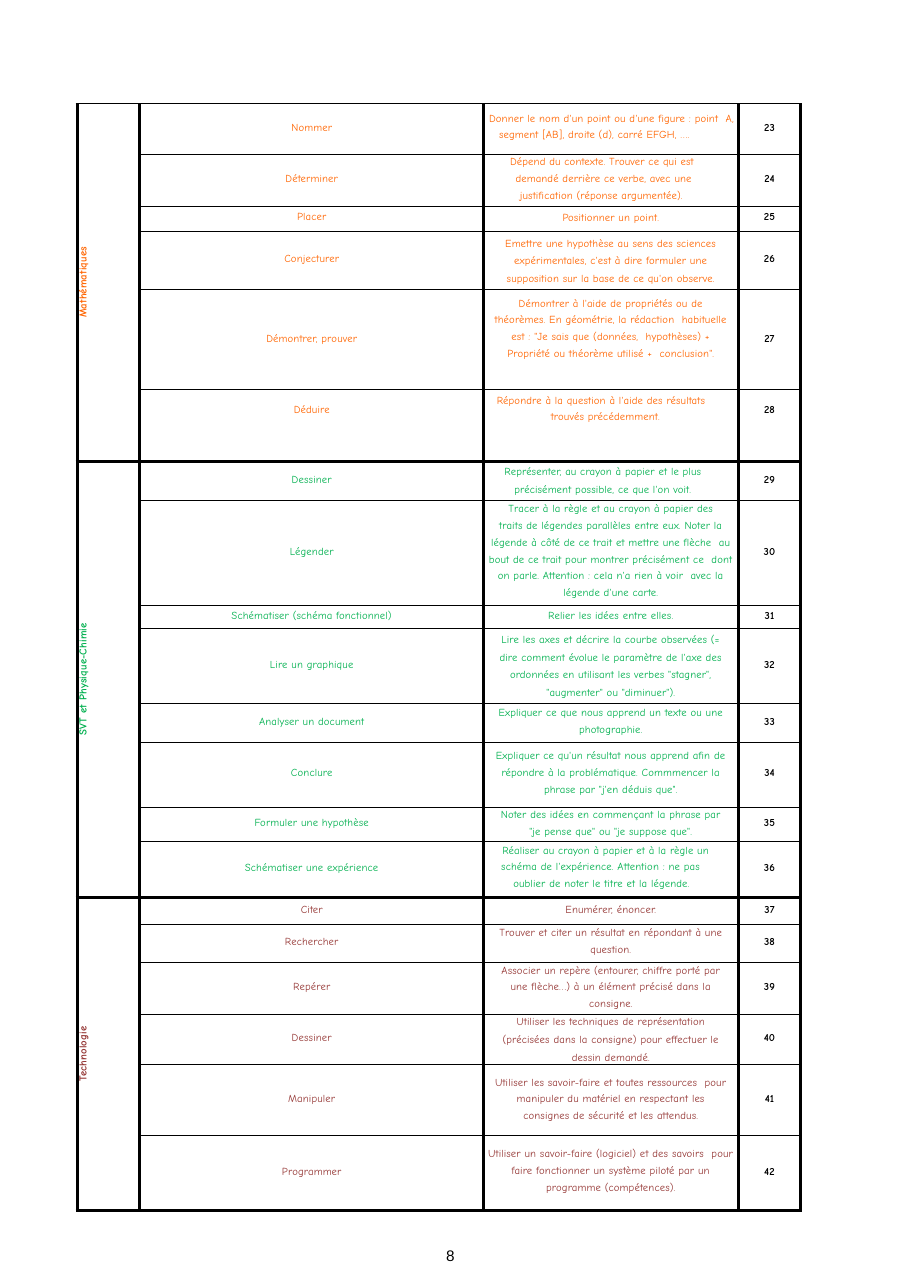
from lxml.etree import SubElement
from pptx import Presentation
from pptx.dml.color import RGBColor
from pptx.enum.text import MSO_ANCHOR, PP_ALIGN
from pptx.oxml import parse_xml
from pptx.oxml.ns import nsdecls, qn
from pptx.util import Inches, Pt

BLACK = RGBColor(0x00, 0x00, 0x00)
ORANGE = RGBColor(0xFF, 0x65, 0x00)
GREEN = RGBColor(0x00, 0xB0, 0x4F)
BROWN = RGBColor(0x95, 0x36, 0x34)

GRID_COLUMNS, GRID_ROWS = 826, 1169
TABLE_COLUMNS = [57, 312, 231, 57]
THICK, THIN = 2.25, 0.75
WIDE, EXACT = 1.37, Pt(11.5)
FIRST_NUMBER = 23

# Row: height, verb, top inset, line spacing, paragraphs ("|" breaks a line),
# then (left margin, first-line indent) of each left-aligned paragraph
SUBJECTS = [
    ("Mathématiques", ORANGE, [
        (46, "Nommer", 4, WIDE,
         ["Donner le nom d'un point ou d'une figure : point  A,|"
          "segment [AB], droite (d), carré EFGH, …."], (14, -9)),
        (47, "Déterminer", 2, WIDE,
         ["Dépend du contexte. Trouver ce qui est",
          "demandé derrière ce verbe, avec une|"
          "justification (réponse argumentée)."], (24, 0), (33, -4)),
        (23, "Placer", 5, 1.0, ["Positionner un point."]),
        (53, "Conjecturer", 1, EXACT,
         ["Emettre une hypothèse au sens des sciences|"
          "expérimentales, c'est à dire formuler une|"
          "supposition sur la base de ce qu'on observe."]),
        (91, "Démontrer, prouver", 3, WIDE,
         ["Démontrer à l'aide de propriétés ou de|"
          "théorèmes. En géométrie, la rédaction  habituelle|"
          "est : \"Je sais que (données,  hypothèses) +|"
          "Propriété ou théorème utilisé +  conclusion\"."]),
        (64, "Déduire", 0, WIDE,
         ["Répondre à la question à l'aide des résultats|"
          "trouvés précédemment."], (61, -49)),
    ]),
    ("SVT et Physique-Chimie", GREEN, [
        (36, "Dessiner", 0, EXACT,
         ["Représenter, au crayon à papier et le plus|"
          "précisément possible, ce que l'on voit."], (28, -9)),
        (95, "Légender", 2, WIDE,
         ["Tracer à la règle et au crayon à papier des",
          "traits de légendes parallèles entre eux. Noter la|"
          "légende à côté de ce trait et mettre une flèche  au|"
          "bout de ce trait pour montrer précisément ce  dont|"
          "on parle. Attention : cela n'a rien à voir  avec la|"
          "légende d'une carte."]),
        (21, "Schématiser (schéma fonctionnel)", 4, 1.0,
         ["Relier les idées entre elles."]),
        (68, "Lire un graphique", 0, EXACT,
         ["Lire les axes et décrire la courbe observées (=|"
          "dire comment évolue le paramètre de l'axe des|"
          "ordonnées en utilisant les verbes \"stagner\",|"
          "\"augmenter\" ou \"diminuer\")."]),
        (35, "Analyser un document", 3, WIDE,
         ["Expliquer ce que nous apprend un texte ou une",
          "photographie."]),
        (59, "Conclure", 3, WIDE,
         ["Expliquer ce qu'un résultat nous apprend afin de|"
          "répondre à la problématique. Commmencer la|"
          "phrase par \"j'en déduis que\"."]),
        (31, "Formuler une hypothèse", 2, WIDE,
         ["Noter des idées en commençant la phrase par",
          "\"je pense que\" ou \"je suppose que\"."]),
        (51, "Schématiser une expérience", 3, WIDE,
         ["Réaliser au crayon à papier et à la règle un",
          "schéma de l'expérience. Attention : ne pas|"
          "oublier de noter le titre et la légende."], (17, 0), (27, -11)),
    ]),
    ("Technologie", BROWN, [
        (25, "Citer", 6, 1.0, ["Enumérer, énoncer."]),
        (34, "Rechercher", 2, WIDE,
         ["Trouver et citer un résultat en répondant à une", "question."]),
        (47, "Repérer", 2, WIDE,
         ["Associer un repère (entourer, chiffre porté par",
          "une flèche…) à un élément précisé dans la|consigne."]),
        (45, "Dessiner", 2, EXACT,
         ["Utiliser les techniques de représentation",
          "(précisées dans la consigne) pour effectuer le|dessin demandé."]),
        (65, "Manipuler", 7, WIDE,
         ["Utiliser les savoir-faire et toutes ressources  pour|"
          "manipuler du matériel en respectant les|"
          "consignes de sécurité et les attendus."]),
        (68, "Programmer", 7, WIDE,
         ["Utiliser un savoir-faire (logiciel) et des savoirs  pour|"
          "faire fonctionner un système piloté par un|"
          "programme (compétences)."]),
    ]),
]


class Sheet:
    """Style and current slide; lengths are columns and rows of a fine grid."""

    body = {"name": "Comic Neue", "size": Pt(7), "bold": False}

    def __init__(self, prs):
        self.s = prs.slides.add_slide(prs.slide_layouts[6])
        self.column = prs.slide_width / GRID_COLUMNS
        self.row = prs.slide_height / GRID_ROWS

    def x(self, columns):
        return round(columns * self.column)

    def y(self, rows):
        return round(rows * self.row)

    def put_text(self, p, text, **style):
        fmt = {**self.body, **style}
        color = fmt.pop("color")
        p.text = text.replace("|", "\v")
        for r in p.runs:
            for key, value in fmt.items():
                setattr(r.font, key, value)
            r.font.color.rgb = color
            r._r.get_or_add_rPr().set("spc", "10")
        for br in p._p.findall(qn("a:br")):
            SubElement(br, qn("a:rPr")).set("sz", str(round(fmt["size"].pt * 100)))

    def label(self, left, top, width, height, text, inset, **style):
        tf = self.s.shapes.add_textbox(
            self.x(left), self.y(top), self.x(width), self.y(height)).text_frame
        tf.margin_left, tf.margin_top = self.x(3), self.y(inset)
        tf.margin_right = tf.margin_bottom = 0
        tf.word_wrap = True
        self.put_text(tf.paragraphs[0], text, **style)

    def table(self, left, top, columns, rows):
        tbl = self.s.shapes.add_table(
            len(rows), len(columns), self.x(left), self.y(top),
            self.x(sum(columns)), self.y(sum(rows))).table
        tbl.first_row = tbl.horz_banding = False
        for column, width in zip(tbl.columns, columns):
            column.width = self.x(width)
        for row, height in zip(tbl.rows, rows):
            row.height = self.y(height)
        return tbl

    def frame(self, cell, top, bottom):
        cell.margin_left = cell.margin_right = 0
        cell.margin_top = cell.margin_bottom = 0
        cell.fill.background()
        tcPr = cell._tc.get_or_add_tcPr()
        sides = {"L": THICK, "R": THICK, "T": top, "B": bottom}
        for i, (side, width) in enumerate(sides.items()):
            tcPr.insert(i, parse_xml(
                f'<a:ln{side} {nsdecls("a")} w="{Pt(width)}"><a:solidFill>'
                f'<a:srgbClr val="{BLACK}"/></a:solidFill></a:ln{side}>'))

    def centred(self, cell, text, lift, **style):
        cell.vertical_anchor = MSO_ANCHOR.MIDDLE
        cell.margin_bottom = self.y(lift)
        p = cell.text_frame.paragraphs[0]
        p.alignment = PP_ALIGN.CENTER
        self.put_text(p, text, **style)

    def definition(self, cell, top, spacing, texts, indents, **style):
        cell.margin_top = self.y(top)
        tf = cell.text_frame
        for i, text in enumerate(texts):
            p = tf.add_paragraph() if i else tf.paragraphs[0]
            p.alignment = PP_ALIGN.LEFT if indents else PP_ALIGN.CENTER
            p.line_spacing = 1.0 if i == 0 and len(texts) > 1 else spacing
            if indents:
                margin, first = indents[i]
                pPr = p._p.get_or_add_pPr()
                pPr.set("marL", str(self.x(margin)))
                pPr.set("indent", str(self.x(first)))
            self.put_text(p, text, **style)


def main():
    prs = Presentation()
    prs.slide_width, prs.slide_height = Inches(8.26), Inches(11.69)
    sheet = Sheet(prs)

    # Page number
    sheet.label(402, 1123, 32, 31, "8", 8, name="Arial", size=Pt(10), color=BLACK)

    # Table of instruction verbs, one block per subject
    heights = [row[0] for _, _, rows in SUBJECTS for row in rows]
    tbl = sheet.table(70, 94, TABLE_COLUMNS, heights)
    n = 0
    for subject, color, rows in SUBJECTS:
        start, end = n, n + len(rows) - 1
        for _, verb, top, spacing, texts, *indents in rows:
            above = THICK if n == start and n else THIN
            below = THICK if n == end else THIN
            for column, cell in enumerate(tbl.rows[n].cells):
                sheet.frame(cell, above, below if column else THICK)
            lift = 28 if verb == "Déduire" else 2
            sheet.centred(tbl.cell(n, 1), verb, lift, color=color)
            sheet.definition(tbl.cell(n, 2), top, spacing, texts, indents, color=color)
            sheet.centred(tbl.cell(n, 3), str(FIRST_NUMBER + n), lift,
                          color=BLACK, bold=True)
            n += 1

        # Subject name, turned and merged over its rows
        head = tbl.cell(start, 0)
        head.merge(tbl.cell(end, 0))
        head._tc.get_or_add_tcPr().set("vert", "vert270")
        sheet.centred(head, subject, 0, color=color, bold=True)

    prs.save("out.pptx")


if __name__ == "__main__":
    main()
